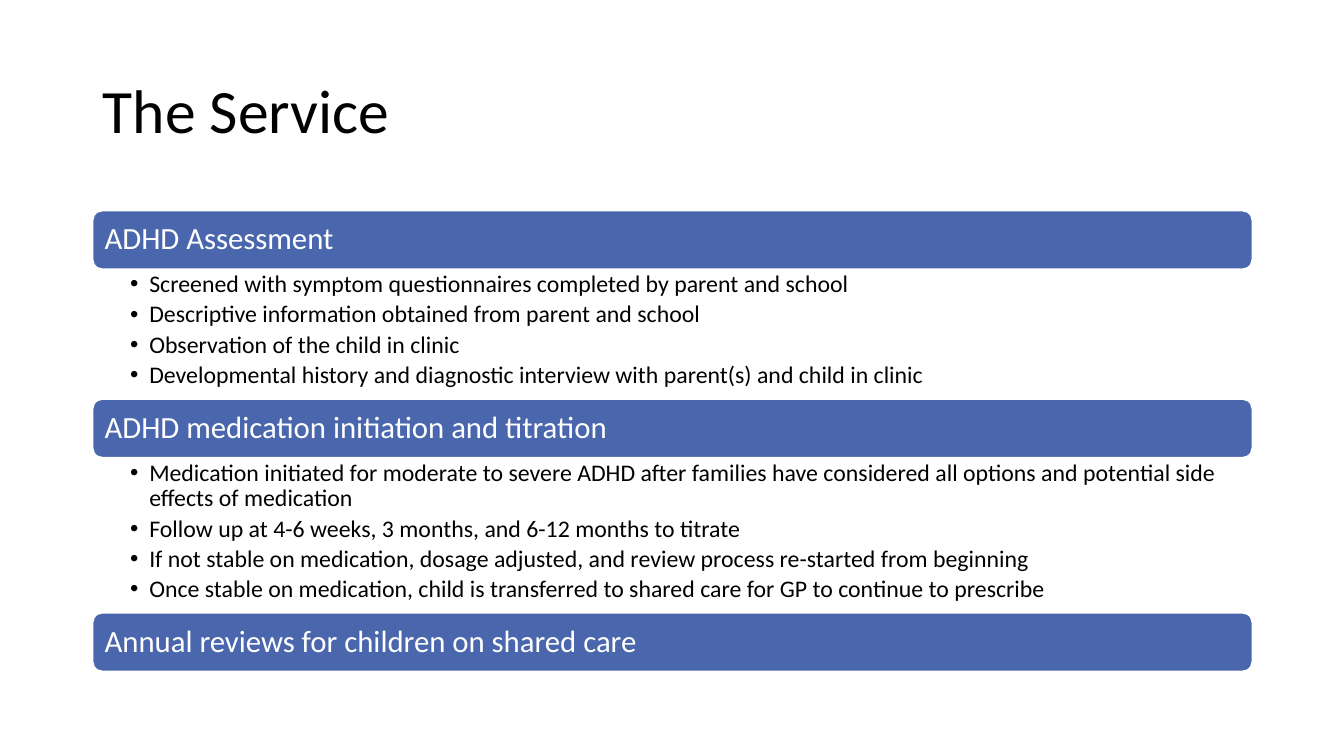
from lxml.etree import SubElement
from pptx import Presentation
from pptx.dml.color import RGBColor
from pptx.enum.shapes import MSO_SHAPE as Shape
from pptx.enum.text import MSO_ANCHOR as Anchor, MSO_AUTO_SIZE as Fit, PP_ALIGN as Align
from pptx.oxml.ns import qn
from pptx.util import Inches, Pt

BLUE = RGBColor(0x4A, 0x66, 0xAC)
WHITE = RGBColor(0xFF, 0xFF, 0xFF)
BLACK = RGBColor(0, 0, 0)
FONT = "Calibri"

TITLE = "The Service"
# heading, height of its list, list items
STEPS = [
    ("ADHD Assessment", 1.29, [
        "Screened with symptom questionnaires completed by parent and school",
        "Descriptive information obtained from parent and school",
        "Observation of the child in clinic",
        "Developmental history and diagnostic interview with parent(s) and child in clinic",
    ]),
    ("ADHD medication initiation and titration", 1.54, [
        "Medication initiated for moderate to severe ADHD after families have considered "
        "all options and potential side effects of medication",
        "Follow up at 4-6 weeks, 3 months, and 6-12 months to titrate",
        "If not stable on medication, dosage adjusted, and review process "
        "re-started from beginning",
        "Once stable on medication, child is transferred to shared care for GP "
        "to continue to prescribe",
    ]),
    ("Annual reviews for children on shared care", 0, []),
]
LEFT, WIDTH, TOP, BAR = 0.92, 11.5, 2.09, 0.58


def place(box, top, height):
    box.left, box.top = Inches(LEFT), Inches(top)
    box.width, box.height = Inches(WIDTH), Inches(height)


def pad(frame, left, top, right, bottom):
    frame.margin_left, frame.margin_top = Inches(left), Inches(top)
    frame.margin_right, frame.margin_bottom = Inches(right), Inches(bottom)
    frame.word_wrap = True
    frame.auto_size = Fit.NONE


def style(para, size, color):
    para.alignment = Align.LEFT
    para.line_spacing = 0.9
    para.space_before = Pt(0)
    para.font.name = FONT
    para.font.size = Pt(size)
    para.font.color.rgb = color


def add_bar(slide, text, top):
    bar = slide.shapes.add_shape(Shape.ROUNDED_RECTANGLE, Inches(LEFT), Inches(top),
                                 Inches(WIDTH), Inches(BAR))
    bar.shadow.inherit = False
    bar.fill.solid()
    bar.fill.fore_color.rgb = BLUE
    bar.line.color.rgb = WHITE
    bar.line.width = Pt(1)
    frame = bar.text_frame
    pad(frame, 0.09, 0.09, 0.09, 0.09)
    frame.vertical_anchor = Anchor.MIDDLE
    frame.text = text
    style(frame.paragraphs[0], 22, WHITE)


def fill_list(box, items, top, height):
    place(box, top, height)
    frame = box.text_frame
    pad(frame, 0.37, 0.03, 0.17, 0.03)
    frame.vertical_anchor = Anchor.TOP
    frame.text = "\n".join(items)
    for para in frame.paragraphs:
        para.level = 1
        props = para._p.get_or_add_pPr()
        props.set("marL", str(Inches(0.19)))
        props.set("indent", str(-Inches(0.19)))
        SubElement(props, qn("a:buFont"), typeface="Arial")
        SubElement(props, qn("a:buChar"), char="•")
        style(para, 17, BLACK)
        para.space_after = Pt(3.2)


def main():
    deck = Presentation()
    deck.slide_width, deck.slide_height = Inches(13.33), Inches(7.5)
    slide = deck.slides.add_slide(deck.slide_layouts[3])  # title and two lists

    # Title
    title = slide.shapes.title
    place(title, 0.4, 1.45)
    frame = title.text_frame
    pad(frame, 0.1, 0.05, 0.1, 0.05)
    frame.vertical_anchor = Anchor.MIDDLE
    frame.text = TITLE
    style(frame.paragraphs[0], 44, BLACK)

    # Stacked bars, each followed by its list
    boxes = iter([slide.placeholders[1], slide.placeholders[2]])
    top = TOP
    for head, height, items in STEPS:
        add_bar(slide, head, top)
        top += BAR
        if items:
            fill_list(next(boxes), items, top, height)
            top += height

    deck.save("out.pptx")


if __name__ == "__main__":
    main()
